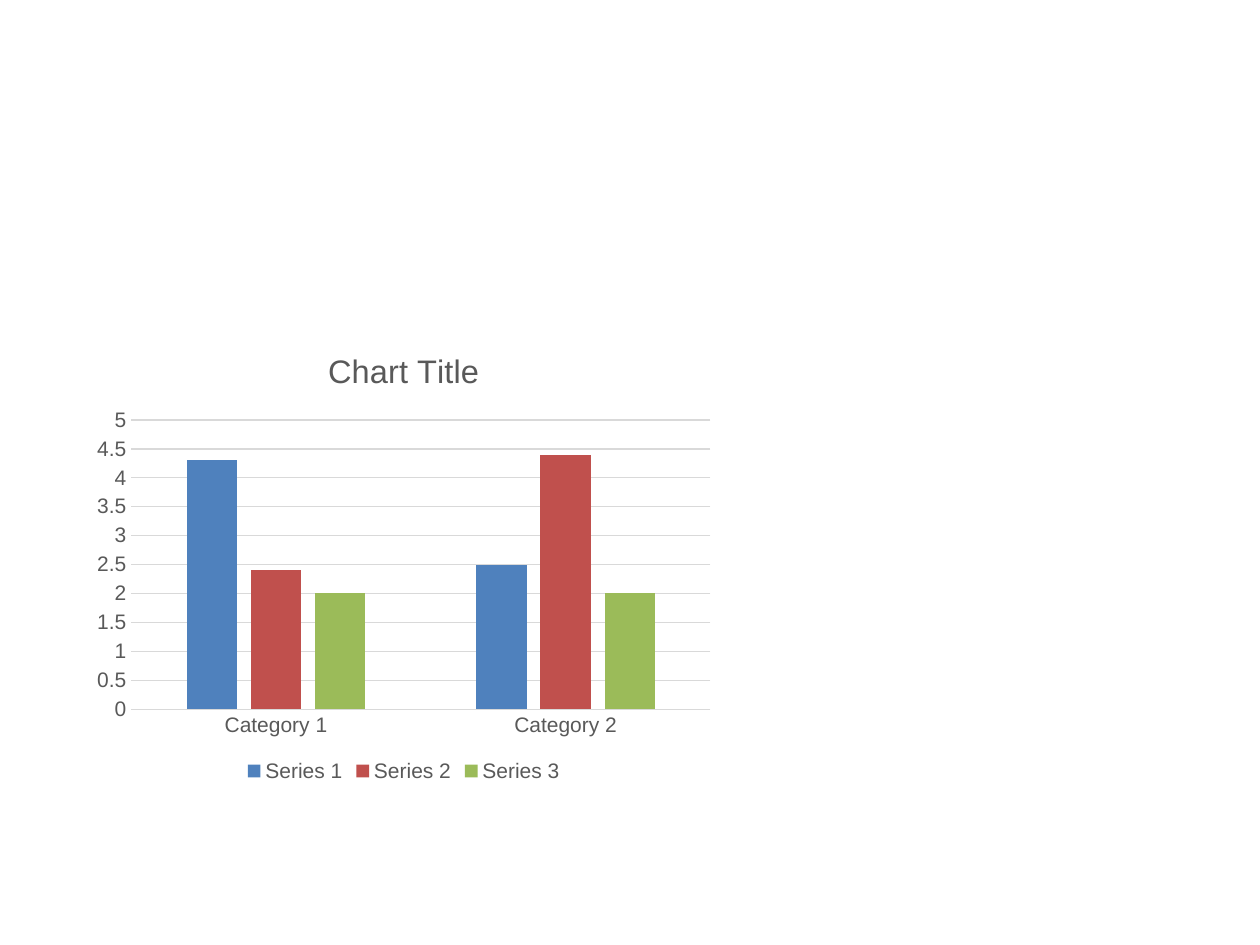
from dataclasses import dataclass

from pptx import Presentation
from pptx.chart.data import CategoryChartData
from pptx.dml.color import RGBColor
from pptx.enum.chart import XL_CHART_TYPE, XL_LEGEND_POSITION, XL_TICK_MARK
from pptx.util import Cm, Pt


@dataclass(frozen=True)
class Theme:
    font: str = "Arial"
    text: str = "595959"
    line: str = "D9D9D9"
    series: tuple = ("4F81BD", "C0504D", "9BBB59")
    title_size: float = 18.6
    label_size: float = 12
    line_width: float = 0.75


def format_font(font, *, name, size, color, bold=False):
    font.name = name
    font.size = Pt(size)
    font.bold = bold
    font.color.rgb = RGBColor.from_string(color)


def write_text(text_frame, text, **font_format):
    """Put one paragraph of text in the frame, formatted by keyword."""
    text_frame.text = text
    format_font(text_frame.paragraphs[0].runs[0].font, **font_format)


class SlideBuilder:
    def __init__(self, slide, theme):
        self.slide = slide
        self.theme = theme
        self.label_format = {
            "name": theme.font, "size": theme.label_size, "color": theme.text,
        }

    def style_line(self, line):
        line.color.rgb = RGBColor.from_string(self.theme.line)
        line.width = Pt(self.theme.line_width)

    def style_axis(self, axis):
        axis.major_tick_mark = XL_TICK_MARK.NONE
        axis.minor_tick_mark = XL_TICK_MARK.NONE
        format_font(axis.tick_labels.font, **self.label_format)

    def style_legend(self, chart):
        chart.has_legend = True
        chart.legend.position = XL_LEGEND_POSITION.BOTTOM
        chart.legend.include_in_layout = False
        format_font(chart.legend.font, **self.label_format)

    def add_column_chart(self, title, categories, series, left, top, width, height):
        chart_data = CategoryChartData()
        chart_data.categories = categories
        for name, values in series.items():
            chart_data.add_series(name, values)
        chart = self.slide.shapes.add_chart(
            XL_CHART_TYPE.COLUMN_CLUSTERED, left, top, width, height, chart_data
        ).chart
        format_font(chart.font, **self.label_format)

        chart.has_title = True
        chart.chart_title.include_in_layout = False
        write_text(chart.chart_title.text_frame, title, name=self.theme.font,
                   size=self.theme.title_size, color=self.theme.text)
        self.style_legend(chart)

        self.style_axis(chart.category_axis)
        self.style_line(chart.category_axis.format.line)
        self.style_axis(chart.value_axis)
        chart.value_axis.format.line.fill.background()
        chart.value_axis.has_major_gridlines = True
        self.style_line(chart.value_axis.major_gridlines.format.line)

        plot = chart.plots[0]
        plot.gap_width = 219
        plot.overlap = -27
        plot.vary_by_categories = False
        for column_series, color in zip(plot.series, self.theme.series):
            column_series.format.fill.solid()
            column_series.format.fill.fore_color.rgb = RGBColor.from_string(color)
        return chart


def main():
    presentation = Presentation()
    presentation.slide_width = Cm(25.4)
    presentation.slide_height = Cm(19.05)
    blank_layout = presentation.slide_layouts[6]
    builder = SlideBuilder(presentation.slides.add_slide(blank_layout), Theme())
    builder.add_column_chart(
        "Chart Title",
        ["Category 1", "Category 2"],
        {"Series 1": (4.3, 2.5), "Series 2": (2.4, 4.4), "Series 3": (2, 2)},
        left=Cm(1.7), top=Cm(6.6), width=Cm(12.88), height=Cm(9.27),
    )
    presentation.save("out.pptx")


if __name__ == "__main__":
    main()
